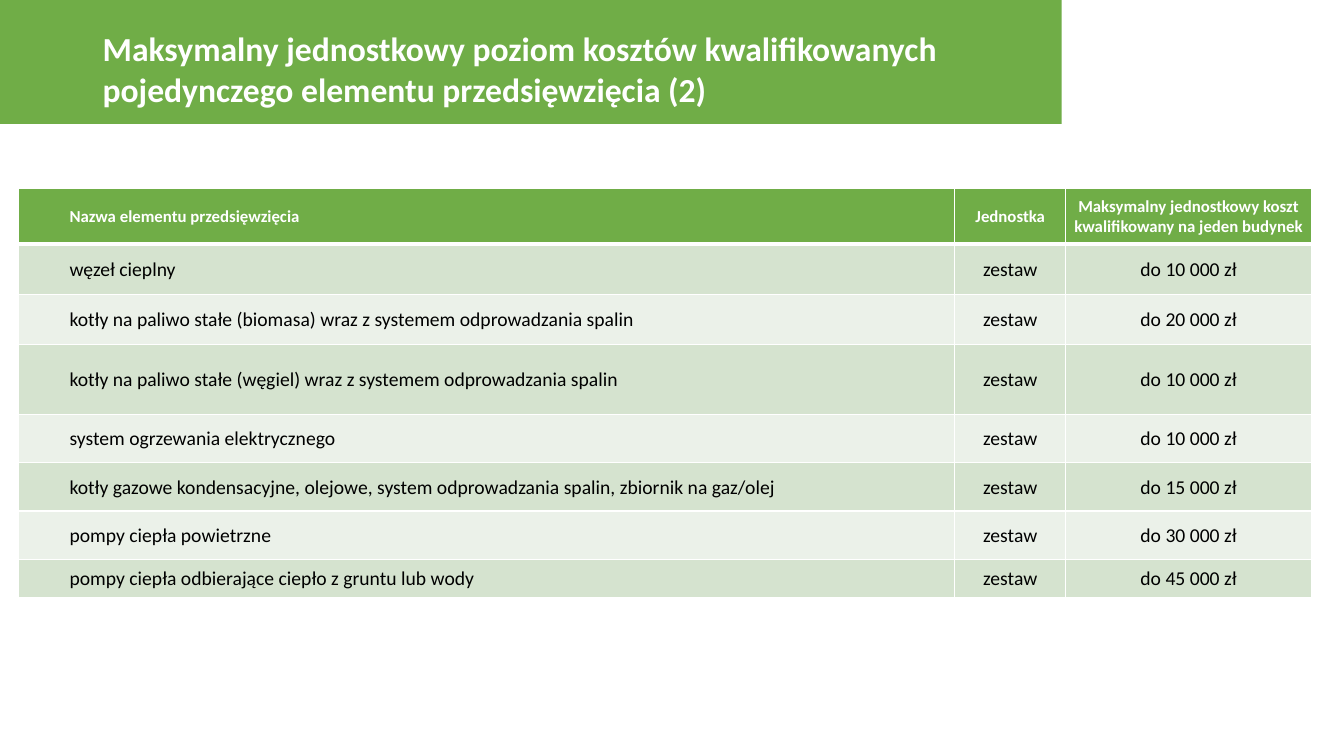
from lxml import etree
from pptx import Presentation, util as u
from pptx.dml.color import RGBColor
from pptx.enum import shapes, text
from pptx.oxml.ns import qn

COLORS = {"green": "70AD47", "band": "D5E3CF", "light": "EBF1E9",
          "white": "FFFFFF", "black": "000000"}
COLS = [9.29, 1.1, 2.44]
HEIGHTS = [0.55, 0.5, 0.5, 0.69, 0.48, 0.48, 0.48, 0.38]
HEADER = ["Nazwa elementu przedsięwzięcia", "Jednostka",
          "Maksymalny jednostkowy koszt kwalifikowany na jeden budynek"]
LIMITS = [
    ("węzeł cieplny", 10),
    ("kotły na paliwo stałe (biomasa) wraz z systemem odprowadzania spalin", 20),
    ("kotły na paliwo stałe (węgiel) wraz z systemem odprowadzania spalin", 10),
    ("system ogrzewania elektrycznego", 10),
    ("kotły gazowe kondensacyjne, olejowe, system odprowadzania spalin, zbiornik na gaz/olej", 15),
    ("pompy ciepła powietrzne", 30),
    ("pompy ciepła odbierające ciepło z gruntu lub wody", 45),
]


class Deck:
    font = "Calibri"

    def __init__(self):
        self.prs = Presentation()
        self.prs.slide_width, self.prs.slide_height = u.Inches(13.33), u.Inches(7.5)
        self.s = self.prs.slides.add_slide(self.prs.slide_layouts[6])

    def color(self, name):
        return RGBColor.from_string(COLORS[name])

    def fill(self, target, name):
        target.fill.solid()
        target.fill.fore_color.rgb = self.color(name)

    def run(self, p, words, size, color, bold):
        r = p.add_run()
        r.text = words
        r.font.name, r.font.size, r.font.bold = self.font, u.Pt(size), bold
        r.font.color.rgb = self.color(color)

    def bar(self, *at):
        sp = self.s.shapes.add_shape(shapes.MSO_SHAPE.RECTANGLE, *map(u.Inches, at))
        sp.shadow.inherit = False
        self.fill(sp, "green")
        sp.line.fill.background()

    def title(self, words, *at):
        tf = self.s.shapes.add_textbox(*map(u.Inches, at)).text_frame
        tf.word_wrap = True
        tf.vertical_anchor = text.MSO_ANCHOR.MIDDLE
        self.run(tf.paragraphs[0], words, 24, "white", True)

    def borders(self, cell, bottom):
        tcPr = cell._tc.get_or_add_tcPr()
        for i, (side, width) in enumerate(zip("LRTB", (1, 1, 1, bottom))):
            ln = etree.Element(qn(f"a:ln{side}"), w=str(u.Pt(width)))
            solid = etree.SubElement(ln, qn("a:solidFill"))
            etree.SubElement(solid, qn("a:srgbClr"), val=COLORS["white"])
            tcPr.insert(i, ln)

    def cell(self, cell, words, first, header, fill):
        cell.margin_left = cell.margin_right = cell.margin_top = u.Inches(0.01)
        cell.margin_bottom = 0
        cell.vertical_anchor = text.MSO_ANCHOR.MIDDLE
        self.fill(cell, fill)
        p = cell.text_frame.paragraphs[0]
        if first:
            p.level = 1
            pPr = p._p.get_or_add_pPr()
            pPr.set("marL", str(u.Inches(0.5)))
            pPr.set("indent", "0")
        else:
            p.alignment = text.PP_ALIGN.CENTER
        self.run(p, words, 12 if header else 14, "white" if header else "black", header)

    def table(self, rows, left, top):
        size = map(u.Inches, (left, top, sum(COLS), sum(HEIGHTS)))
        tbl = self.s.shapes.add_table(len(rows), len(COLS), *size).table
        for col, width in zip(tbl.columns, COLS):
            col.width = u.Inches(width)
        for i, (row, height) in enumerate(zip(rows, HEIGHTS)):
            tbl.rows[i].height = u.Inches(height)
            header = i == 0
            fill = "green" if header else ("light", "band")[i % 2]
            for j, words in enumerate(row):
                cell = tbl.cell(i, j)
                self.cell(cell, words, j == 0, header, fill)
                self.borders(cell, 3 if header else 1)
                if i == 1:
                    cell._tc.tcPr.find(qn("a:lnT")).set("w", str(u.Pt(3)))


def main():
    deck = Deck()
    deck.bar(0, 0, 10.53, 1.23)
    rows = [HEADER] + [[name, "zestaw", f"do {limit} 000 zł"] for name, limit in LIMITS]
    deck.table(rows, 0.18, 1.87)
    deck.title("Maksymalny jednostkowy poziom kosztów kwalifikowanych "
               "pojedynczego elementu przedsięwzięcia (2)", 0.92, 0.21, 9.53, 0.94)
    deck.prs.save("out.pptx")


if __name__ == "__main__":
    main()
